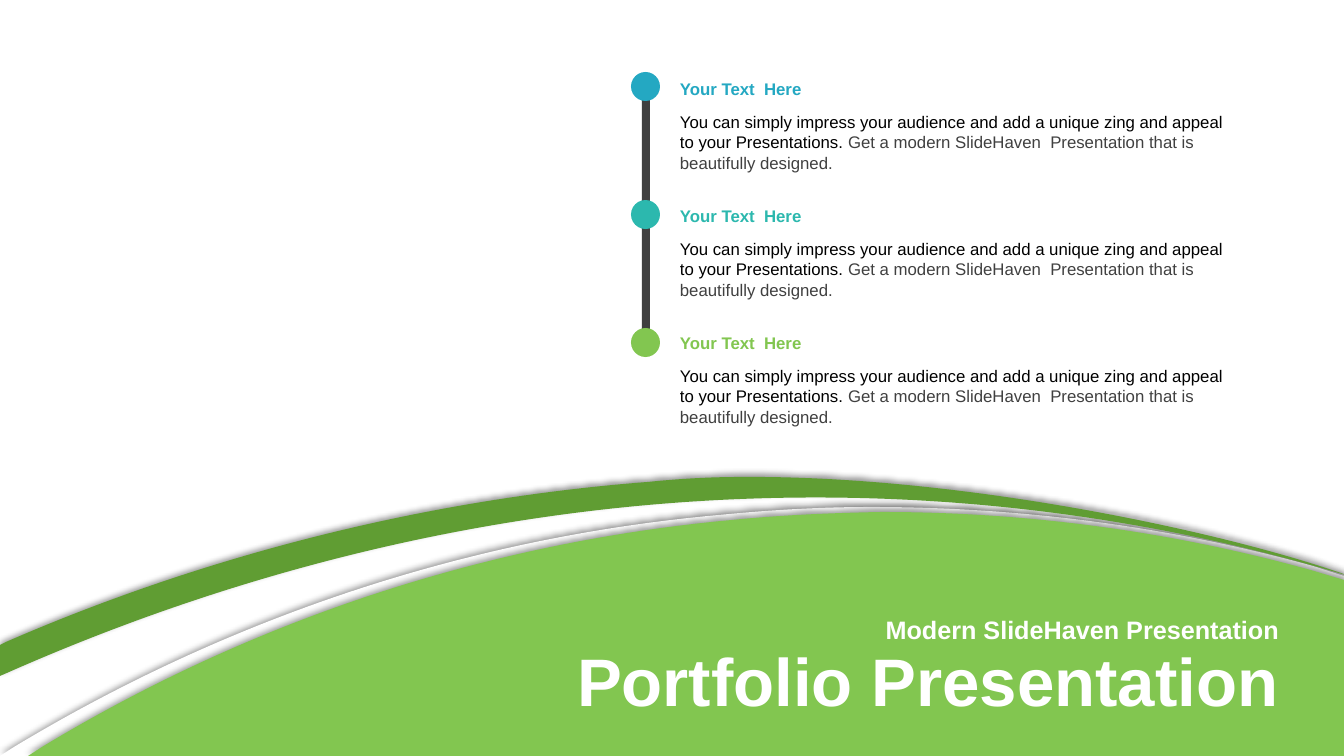
"""Build the portfolio slide: a three-step timeline above layered green hills."""
from dataclasses import dataclass

from lxml.etree import SubElement
from pptx import Presentation
from pptx.dml.color import RGBColor
from pptx.enum.shapes import MSO_SHAPE
from pptx.enum.text import MSO_ANCHOR, MSO_AUTO_SIZE, PP_ALIGN
from pptx.oxml.ns import qn
from pptx.util import Pt

TITLE = "Portfolio Presentation"
SUBTITLE = "Modern SlideHaven Presentation"
HEADING = "Your Text  Here"
LEAD = "You can simply impress your audience and add a unique zing and appeal to your Presentations. "
DETAIL = "Get a modern SlideHaven  Presentation that is beautifully designed."


@dataclass(frozen=True)
class Theme:
    font: str = "Arial"
    white: str = "FFFFFF"
    black: str = "000000"
    gray: str = "404040"
    bar: str = "3F3F3F"
    green: str = "82C650"
    dark_green: str = "609D33"
    steps: tuple = ("24A8C2", "2CB8AE", "82C650")
    body_size: int = 12
    subtitle_size: int = 18
    title_size: int = 48


THEME = Theme()

# Each step is one point for a line or three points for a Bezier curve.
HILLS = [
    (THEME.white, (871, 507), [
        [(1023, 507), (1172, 527), (1313, 566)],
        [(1344, 576)], [(1344, 756)], [(0, 756)], [(14, 747)],
        [(223, 621), (462, 538), (719, 515)],
        [(770, 510), (820, 507), (871, 507)]]),
    (THEME.green, (881, 512), [
        [(1030, 512), (1175, 532), (1314, 571)],
        [(1344, 580)], [(1344, 756)], [(28, 756)], [(42, 747)],
        [(247, 623), (481, 543), (732, 520)],
        [(782, 515), (832, 513), (881, 512)]]),
    (THEME.dark_green, (740, 477), [
        [(961, 475), (1228, 532), (1352, 577)],
        [(907, 442), (442, 483), (16, 669)],
        [(0, 676)], [(0, 645)], [(6, 642)],
        [(206, 555), (427, 499), (648, 482)],
        [(677, 479), (709, 477), (740, 477)]]),
]

SLIDE_WIDTH, SLIDE_HEIGHT = 1344, 756
EMU_PER_PX = 914400 / 100.8
DOT_LEFT, DOT_TOP, DOT_SIZE, DOT_STEP = 631, 72, 29, 128
TEXT_LEFT, TEXT_TOP, TEXT_WIDTH, TEXT_STEP = 670, 74, 575, 127
HEADING_HEIGHT, BODY_OFFSET, BODY_HEIGHT = 30, 33, 72
BAR_BOX = (642, 98, 8, 232)
TITLE_BOX = (512, 645, 777, 79)
SUBTITLE_BOX = (815, 614, 474, 31)


def px(length):
    return round(length * EMU_PER_PX)


def paint(shape, color):
    shape.shadow.inherit = False
    shape.fill.solid()
    shape.fill.fore_color.rgb = RGBColor.from_string(color)
    shape.line.fill.background()


def add_preset(slide, kind, box, color):
    paint(slide.shapes.add_shape(kind, *map(px, box)), color)


def format_run(run, size, color, bold=False):
    run.font.name = THEME.font
    run.font.size = Pt(size)
    run.font.bold = bold
    run.font.color.rgb = RGBColor.from_string(color)


def add_text(slide, box, text, size, color, bold=False):
    shape = slide.shapes.add_textbox(*map(px, box))
    shape.text_frame.word_wrap = True
    shape.text_frame.text = text
    paragraph = shape.text_frame.paragraphs[0]
    format_run(paragraph.runs[0], size, color, bold)
    return shape


def align_right(shape):
    shape.text_frame.vertical_anchor = MSO_ANCHOR.MIDDLE
    shape.text_frame.paragraphs[0].alignment = PP_ALIGN.RIGHT


def bend_segments(shape, steps):
    lines = list(shape._element.iter(qn("a:lnTo")))
    for line, step in zip(lines, steps):
        if len(step) == 3:
            line.tag = qn("a:cubicBezTo")
            line.clear()
            for x, y in step:
                SubElement(line, qn("a:pt"), x=str(px(x) - shape.left), y=str(px(y) - shape.top))


def add_upward_shadow(shape):
    effects = shape._element.spPr.find(qn("a:effectLst"))
    shadow = SubElement(effects, qn("a:outerShdw"), blurRad=str(Pt(4)), dist=str(Pt(3)),
                        dir=str(270 * 60000), algn="b", rotWithShape="0")
    color = SubElement(shadow, qn("a:srgbClr"), val=THEME.black)
    SubElement(color, qn("a:alpha"), val="40000")


def add_hill(slide, color, start, steps):
    builder = slide.shapes.build_freeform(*map(px, start))
    builder.add_line_segments([tuple(map(px, step[-1])) for step in steps], close=True)
    hill = builder.convert_to_shape()
    bend_segments(hill, steps)
    paint(hill, color)
    add_upward_shadow(hill)


def add_timeline(slide):
    add_preset(slide, MSO_SHAPE.RECTANGLE, BAR_BOX, THEME.bar)
    for index, color in enumerate(THEME.steps):
        dot_box = (DOT_LEFT, DOT_TOP + index * DOT_STEP, DOT_SIZE, DOT_SIZE)
        add_preset(slide, MSO_SHAPE.OVAL, dot_box, color)
        top = TEXT_TOP + index * TEXT_STEP
        add_text(slide, (TEXT_LEFT, top, TEXT_WIDTH, HEADING_HEIGHT),
                 HEADING, THEME.body_size, color, bold=True)
        body = add_text(slide, (TEXT_LEFT, top + BODY_OFFSET, TEXT_WIDTH, BODY_HEIGHT),
                        LEAD, THEME.body_size, THEME.black)
        detail = body.text_frame.paragraphs[0].add_run()
        detail.text = DETAIL
        format_run(detail, THEME.body_size, THEME.gray)


def add_titles(slide):
    title = slide.shapes.title
    title.left, title.top, title.width, title.height = map(px, TITLE_BOX)
    title.text_frame.text = TITLE
    title.text_frame.auto_size = MSO_AUTO_SIZE.NONE
    paragraph = title.text_frame.paragraphs[0]
    paragraph.line_spacing = 0.9
    format_run(paragraph.runs[0], THEME.title_size, THEME.white, bold=True)
    align_right(title)
    slide.shapes._spTree.append(title._element)
    align_right(add_text(slide, SUBTITLE_BOX, SUBTITLE, THEME.subtitle_size, THEME.white, bold=True))


def main():
    presentation = Presentation()
    presentation.slide_width, presentation.slide_height = px(SLIDE_WIDTH), px(SLIDE_HEIGHT)
    slide = presentation.slides.add_slide(presentation.slide_layouts[5])
    add_timeline(slide)
    for hill in HILLS:
        add_hill(slide, *hill)
    add_titles(slide)
    presentation.save("out.pptx")


if __name__ == "__main__":
    main()
